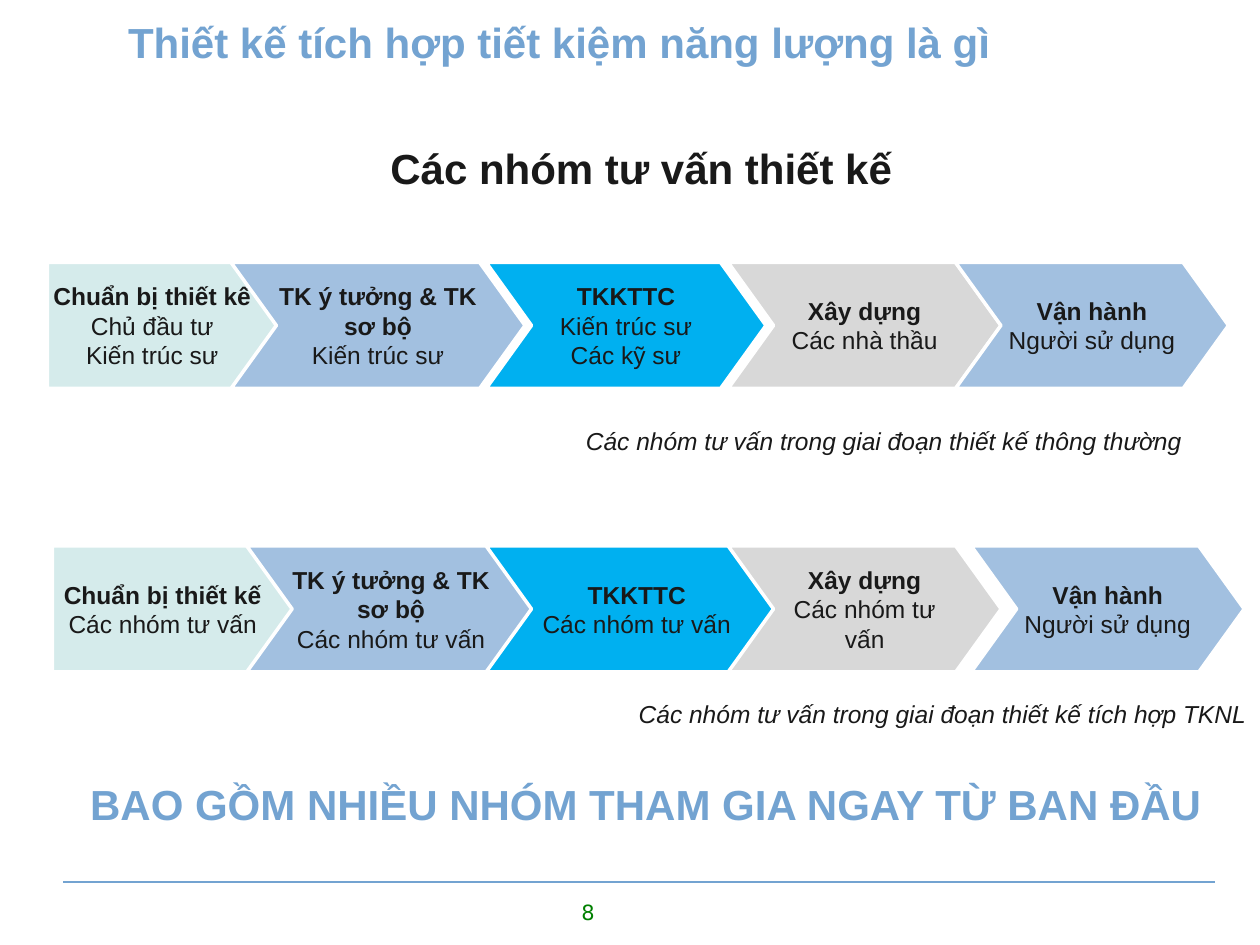
"""Builds the slide comparing design teams in conventional and integrated design."""
from lxml import etree
from pptx import Presentation, util as u
from pptx.dml.color import RGBColor
from pptx.enum import shapes, text
from pptx.oxml.ns import qn

BLUE = RGBColor(0x73, 0xA3, 0xD1)
INK = RGBColor(0x19, 0x19, 0x19)
GREEN = RGBColor(0x00, 0x80, 0x00)
WHITE = RGBColor(0xFF, 0xFF, 0xFF)
MINT = RGBColor(0xD5, 0xEB, 0xEB)
SKY = RGBColor(0xA2, 0xC0, 0xE0)
CYAN = RGBColor(0x00, 0xB0, 0xF0)
GREY = RGBColor(0xD8, 0xD8, 0xD8)

W, H = u.Inches(10), u.Inches(7.5)
COL, ROW = W / 240, H / 90
PHASE_ROWS = 12
PHASE_FILLS = [MINT, SKY, CYAN, GREY, SKY]
LEFT, CENTER = text.PP_ALIGN.LEFT, text.PP_ALIGN.CENTER
TOP, MIDDLE = text.MSO_ANCHOR.TOP, text.MSO_ANCHOR.MIDDLE

CONVENTIONAL = [
    (9, 44, ["Chuẩn bị thiết kế", "Chủ đầu tư", "Kiến trúc sư"]),
    (44, 56, ["TK ý tưởng & TK sơ bộ", "Kiến trúc sư"]),
    (92.6, 53.3, ["TKKTTC", "Kiến trúc sư", "Các kỹ sư"]),
    (138.7, 52, ["Xây dựng", "Các nhà thầu"]),
    (182, 52, ["Vận hành", "Người sử dụng"]),
]
INTEGRATED = [
    (10, 46, ["Chuẩn bị thiết kế", "Các nhóm tư vấn"]),
    (47, 55, ["TK ý tưởng & TK sơ bộ", "Các nhóm tư vấn"]),
    (92.6, 57.4, ["TKKTTC", "Các nhóm tư vấn"]),
    (138.7, 52, ["Xây dựng", "Các nhóm tư vấn"]),
    (185, 52, ["Vận hành", "Người sử dụng"]),
]


def cells(x, y, w, h):
    """Convert grid columns and rows to lengths."""
    return int(x * COL), int(y * ROW), int(w * COL), int(h * ROW)


def set_font(p, size, color, bold=False, italic=False, name="Arial"):
    """Format a whole paragraph."""
    f = p.font
    f.name, f.size, f.bold, f.italic = name, u.Pt(size), bold, italic
    f.color.rgb = color


def set_frame(tf, anchor, side):
    """Set wrapping, anchor and insets of a text frame."""
    tf.word_wrap = True
    tf.auto_size = text.MSO_AUTO_SIZE.NONE
    tf.vertical_anchor = anchor
    tf.margin_left = tf.margin_right = u.Inches(side)
    tf.margin_top = tf.margin_bottom = u.Inches(0.05)


def add_title(s, words, grid):
    """Fill and place the title placeholder."""
    sp = s.shapes.title
    sp.left, sp.top, sp.width, sp.height = cells(*grid)
    set_frame(sp.text_frame, TOP, 0.1)
    p = sp.text_frame.paragraphs[0]
    p.text, p.alignment = words, LEFT
    set_font(p, 24, BLUE, bold=True)


def add_label(parent, words, grid, size, color, align=LEFT, anchor=TOP, side=0.1, **style):
    """Add a one-paragraph text box."""
    tf = parent.shapes.add_textbox(*cells(*grid)).text_frame
    set_frame(tf, anchor, side)
    p = tf.paragraphs[0]
    p.text, p.alignment = words, align
    set_font(p, size, color, **style)


def add_phase(parent, kind, point, fill, grid, lines):
    """Add one arrow with a bold heading over its teams."""
    sp = parent.shapes.add_shape(kind, *cells(*grid))
    sp.adjustments[0] = point
    sp.shadow.inherit = False
    sp.fill.solid()
    sp.fill.fore_color.rgb = fill
    sp.line.color.rgb = WHITE
    sp.line.width = u.Pt(2)
    tf = sp.text_frame
    set_frame(tf, MIDDLE, 0)
    for i, line in enumerate(lines):
        p = tf.add_paragraph() if i else tf.paragraphs[0]
        p.text, p.alignment = line, CENTER
        set_font(p, 14, INK, bold=i == 0)


def add_process(s, phases, row, caption, caption_grid, side):
    """Add a captioned group of phase arrows."""
    group = s.shapes.add_group_shape()
    add_label(group, caption, caption_grid, 14, INK, side=side, italic=True)
    for i, ((x, w, lines), fill) in enumerate(zip(phases, PHASE_FILLS)):
        kind, point = (shapes.MSO_SHAPE.CHEVRON, 0.36) if i else (shapes.MSO_SHAPE.PENTAGON, 0.33)
        add_phase(group, kind, point, fill, (x, row, w, PHASE_ROWS), lines)


def add_rule(s, x1, x2, y):
    """Add the horizontal footer line."""
    left, top, width, _ = cells(x1, y, x2 - x1, 0)
    line = s.shapes.add_connector(shapes.MSO_CONNECTOR.STRAIGHT, left, top, left + width, top)
    line.line.color.rgb = BLUE
    line.line.width = u.Pt(1.5)
    etree.SubElement(line._element.spPr, qn("a:effectLst"))


def main():
    """Build and save the slide."""
    prs = Presentation()
    prs.slide_width, prs.slide_height = W, H
    s = prs.slides.add_slide(prs.slide_layouts[5])
    add_rule(s, 12, 231.4, 84)
    add_label(s, "8", (84, 85.1, 56, 4.2), 12, GREEN, CENTER, name="DejaVu Sans")
    add_title(s, "Thiết kế tích hợp tiết kiệm năng lượng là gì", (22, 1, 170, 6))
    add_process(s, CONVENTIONAL, 25, "Các nhóm tư vấn trong giai đoạn thiết kế thông thường",
                (111.6, 40, 122.4, 4), 0)
    add_process(s, INTEGRATED, 52, "Các nhóm tư vấn trong giai đoạn thiết kế tích hợp TKNL",
                (119.3, 66, 120.7, 4), 0.1)
    add_label(s, "BAO GỒM NHIỀU NHÓM THAM GIA NGAY TỪ BAN ĐẦU", (12, 69, 222, 15),
              24, BLUE, CENTER, MIDDLE, bold=True)
    add_label(s, "Các nhóm tư vấn thiết kế", (72, 13, 110, 6), 24, INK, bold=True)
    prs.save("out.pptx")


if __name__ == "__main__":
    main()
